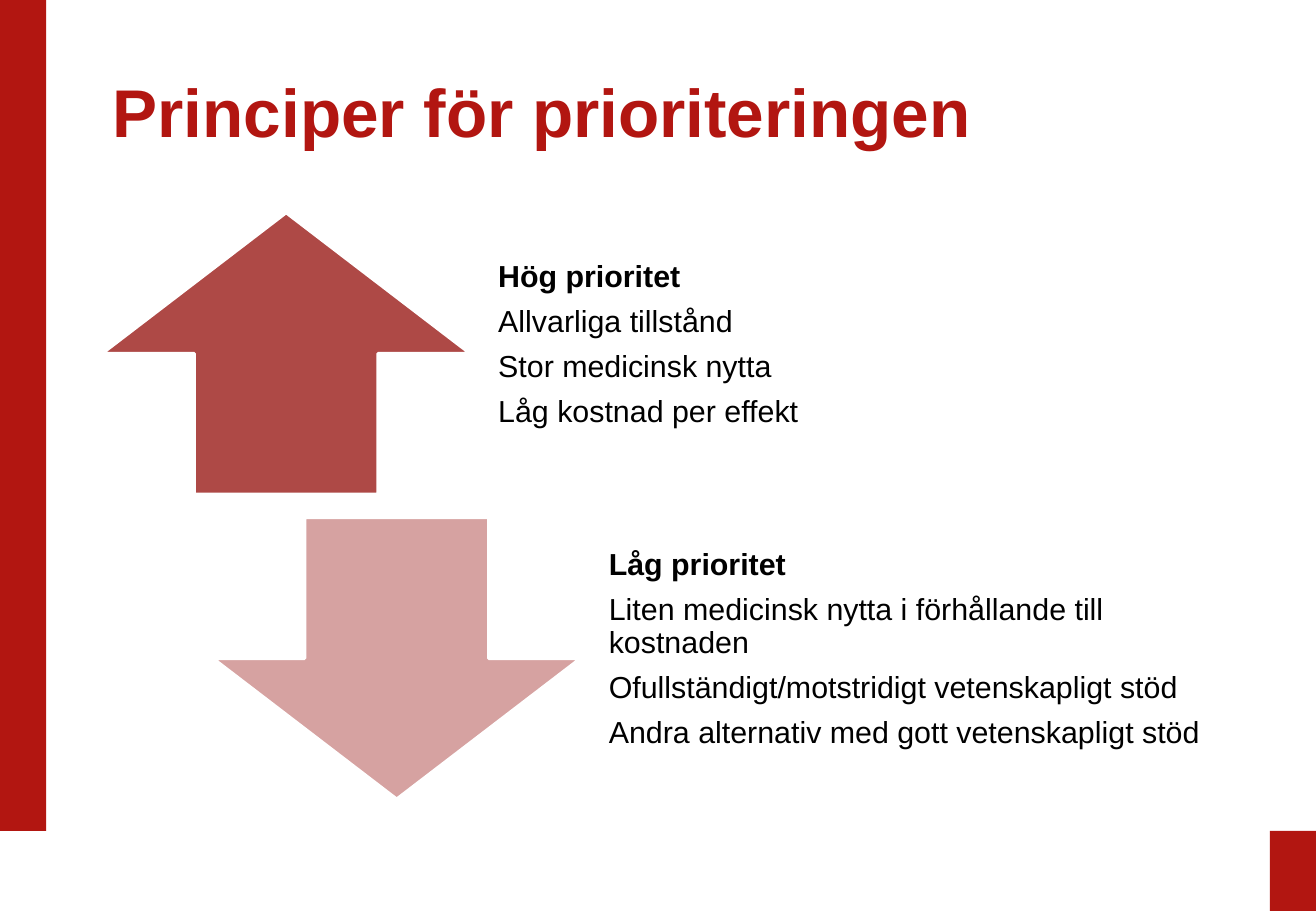
from pptx import Presentation
from pptx.dml.color import RGBColor
from pptx.enum.shapes import MSO_SHAPE as Shape
from pptx.enum.text import MSO_ANCHOR as Anchor
from pptx.util import Inches, Pt

RED = RGBColor(0xB2, 0x16, 0x11)
DARK_RED = RGBColor(0xAE, 0x49, 0x46)
PINK = RGBColor(0xD6, 0xA2, 0xA1)
WHITE = RGBColor(0xFF, 0xFF, 0xFF)
BLACK = RGBColor(0x00, 0x00, 0x00)

WIDTH, HEIGHT = 10.83, 7.5
BAND = 0.38              # width of the red edge bands
FOOT = 0.66              # height of the bottom strip
LEFT, TOP = 0.84, 1.75   # first arrow
COLUMN, ROW = 0.91, 2.51  # shift from one arrow to the next
ARROW_WIDTH, ARROW_HEIGHT = 3.03, 2.32
TEXT_OFFSET, TEXT_WIDTH = 3.12, 5.15

deck = Presentation()
deck.slide_width, deck.slide_height = Inches(WIDTH), Inches(HEIGHT)
page = deck.slides.add_slide(deck.slide_layouts[6])


def add_block(kind, left, top, width, height, fill, line=None):
    block = page.shapes.add_shape(
        kind, Inches(left), Inches(top), Inches(width), Inches(height))
    block.shadow.inherit = False
    block.fill.solid()
    block.fill.fore_color.rgb = fill
    if line is None:
        block.line.fill.background()
    else:
        block.line.color.rgb = line
        block.line.width = Pt(2)


def add_text(lines, left, top, width, height, size=18, color=BLACK,
             margins=(0.14, 0, 0.14, 0.14), after=7.2):
    box = page.shapes.add_textbox(
        Inches(left), Inches(top), Inches(width), Inches(height))
    frame = box.text_frame
    frame.word_wrap = True
    frame.vertical_anchor = Anchor.MIDDLE
    (frame.margin_left, frame.margin_top,
     frame.margin_right, frame.margin_bottom) = map(Inches, margins)
    for index, line in enumerate(lines):
        para = frame.paragraphs[0] if index == 0 else frame.add_paragraph()
        para.line_spacing = 0.9
        para.space_after = Pt(after)
        span = para.add_run()
        span.text = line
        span.font.name = "Arial"
        span.font.size = Pt(size)
        span.font.bold = index == 0  # the first line is the heading
        span.font.color.rgb = color


# Red edge bands
add_block(Shape.RECTANGLE, 0, 0, BAND, HEIGHT - FOOT, RED)
add_block(Shape.RECTANGLE, WIDTH - BAND, HEIGHT - FOOT, BAND, FOOT, RED)

# Title
add_text(["Principer för prioriteringen"], 0.83, 0.33, 9.21, 1.25,
         size=40, color=RED, margins=(0.1, 0.05, 0.1, 0.05), after=0)

# Arrows, each with its list to the right
priorities = [
    (Shape.UP_ARROW, DARK_RED,
     ["Hög prioritet",
      "Allvarliga tillstånd",
      "Stor medicinsk nytta",
      "Låg kostnad per effekt"]),
    (Shape.DOWN_ARROW, PINK,
     ["Låg prioritet",
      "Liten medicinsk nytta i förhållande till kostnaden",
      "Ofullständigt/motstridigt vetenskapligt stöd",
      "Andra alternativ med gott vetenskapligt stöd"]),
]
for step, (arrow, fill, lines) in enumerate(priorities):
    left, top = LEFT + step * COLUMN, TOP + step * ROW
    add_block(arrow, left, top, ARROW_WIDTH, ARROW_HEIGHT, fill, line=WHITE)
    add_text(lines, left + TEXT_OFFSET, top, TEXT_WIDTH, ARROW_HEIGHT)

deck.save("out.pptx")
